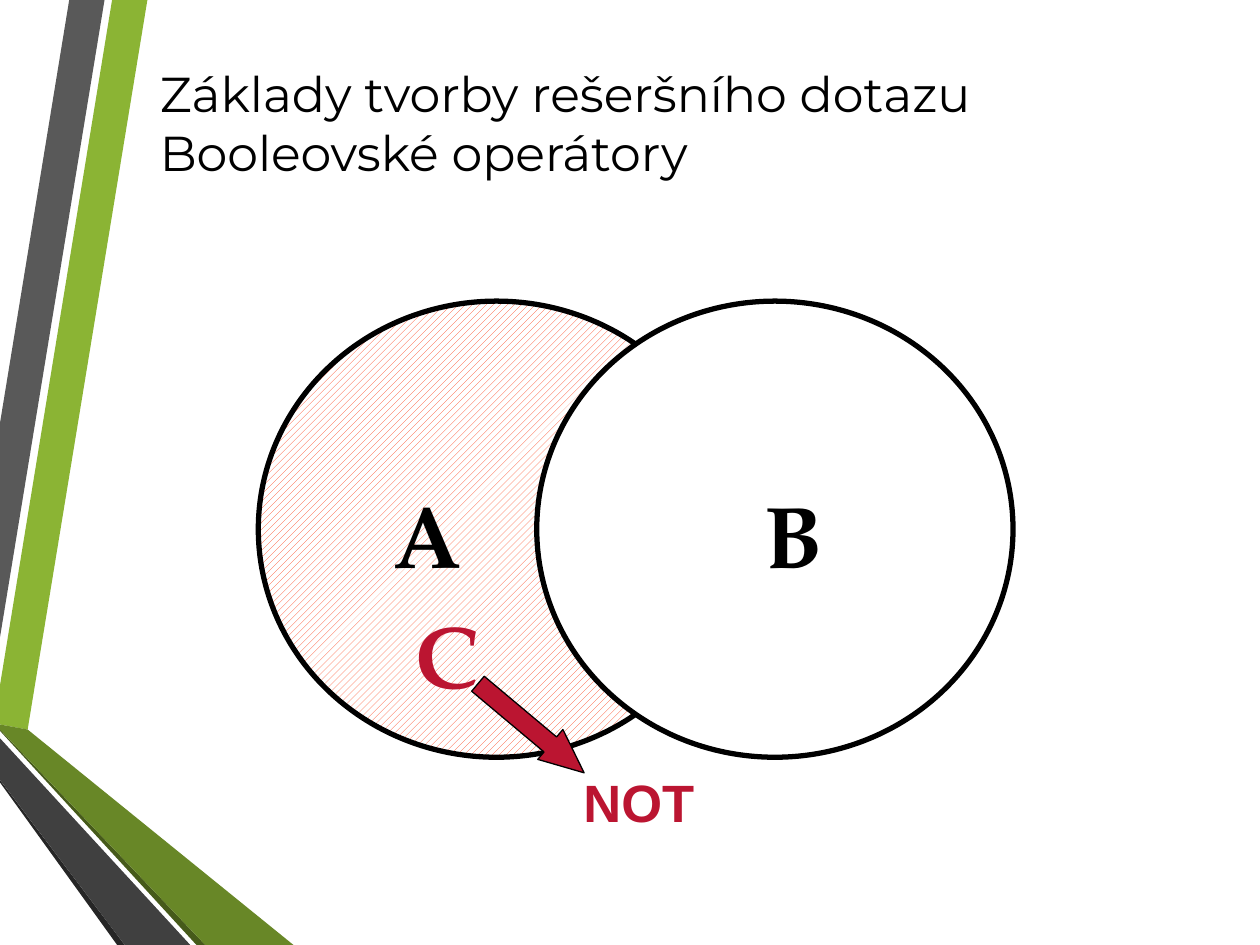
from dataclasses import dataclass

from pptx import Presentation
from pptx.dml.color import RGBColor
from pptx.enum.dml import MSO_PATTERN
from pptx.enum.shapes import MSO_SHAPE
from pptx.enum.text import MSO_ANCHOR, PP_ALIGN
from pptx.util import Inches, Pt


@dataclass(frozen=True)
class Theme:
    black: str = "000000"
    white: str = "FFFFFF"
    red: str = "BB1531"
    hatch: str = "FE4A26"
    title_font: str = "Montserrat"
    letter_font: str = "TeX Gyre Pagella"
    label_font: str = "Arial"
    title_size: int = 28
    letter_size: int = 50
    label_size: int = 30
    circle_line: float = 3
    arrow_line: float = 0.75


RIBBONS = [
    ("8BB434", [(0, 5.44), (0, 5.75), (0.22, 5.79), (1.17, 0), (0.89, 0)]),
    ("595959", [(0.83, 0), (0.55, 0), (0, 3.36), (0, 5.06)]),
    ("262626", [(0, 6.19), (0, 6.21), (0.93, 7.5), (0.99, 7.5)]),
    ("465A1A", [(0, 5.79), (0, 5.8), (1.56, 7.5), (1.63, 7.5)]),
    ("688727", [(0, 5.79), (1.63, 7.5), (2.33, 7.5), (0.22, 5.79), (0, 5.75)]),
    ("404040", [(0, 6.19), (0.99, 7.5), (1.51, 7.5), (0, 5.86)]),
]


class SlideBuilder:
    """Draws styled elements on the current slide."""

    def __init__(self, page, theme):
        self.shapes = page.shapes
        self.theme = theme

    def ribbon(self, color, points):
        corners = [(Inches(x), Inches(y)) for x, y in points]
        outline = self.shapes.build_freeform(*corners[0])
        outline.add_line_segments(corners[1:], close=True)
        shape = outline.convert_to_shape()
        shape.shadow.inherit = False
        shape.fill.solid()
        shape.fill.fore_color.rgb = RGBColor.from_string(color)
        shape.line.fill.background()

    def outlined(self, kind, bounds, line_width):
        shape = self.shapes.add_shape(kind, *map(Inches, bounds))
        shape.shadow.inherit = False
        shape.line.color.rgb = RGBColor.from_string(self.theme.black)
        shape.line.width = Pt(line_width)
        return shape

    def circle(self, left, hatched=False):
        bounds = (left, 2.39, 3.78, 3.62)
        shape = self.outlined(MSO_SHAPE.OVAL, bounds, self.theme.circle_line)
        white = RGBColor.from_string(self.theme.white)
        if hatched:
            shape.fill.patterned()
            shape.fill.pattern = MSO_PATTERN.WIDE_UPWARD_DIAGONAL
            shape.fill.fore_color.rgb = RGBColor.from_string(self.theme.hatch)
            shape.fill.back_color.rgb = white
        else:
            shape.fill.solid()
            shape.fill.fore_color.rgb = white

    def arrow(self, bounds, rotation):
        shape = self.outlined(MSO_SHAPE.DOWN_ARROW, bounds, self.theme.arrow_line)
        shape.rotation = rotation
        shape.adjustments[0] = 0.5
        shape.adjustments[1] = 1.13
        shape.fill.solid()
        shape.fill.fore_color.rgb = RGBColor.from_string(self.theme.red)

    def text(self, words, bounds, font, size, color, bold=False, align=PP_ALIGN.CENTER):
        box = self.shapes.add_textbox(*map(Inches, bounds))
        frame = box.text_frame
        frame.word_wrap = True
        frame.text = words
        paragraph = frame.paragraphs[0]
        paragraph.alignment = align
        for span in paragraph.runs:
            span.font.name = font
            span.font.size = Pt(size)
            span.font.bold = bold
            span.font.color.rgb = RGBColor.from_string(color)
        return frame

    def title(self, words):
        theme = self.theme
        frame = self.text(words, (1.17, 0.5, 8.43, 0.94), theme.title_font,
                          theme.title_size, theme.black, align=PP_ALIGN.LEFT)
        frame.vertical_anchor = MSO_ANCHOR.MIDDLE

    def letter(self, words, left, top, color):
        self.text(words, (left, top, 0.94, 0.93), self.theme.letter_font,
                  self.theme.letter_size, color, bold=True)

    def operator(self, words):
        theme = self.theme
        frame = self.text(words, (4.02, 6.06, 1.6, 0.61), theme.label_font,
                          theme.label_size, theme.red, bold=True)
        frame.margin_left = Inches(0.5)
        frame.margin_right = 0


def main():
    deck = Presentation()
    deck.slide_width, deck.slide_height = Inches(10), Inches(7.5)
    theme = Theme()
    builder = SlideBuilder(deck.slides.add_slide(deck.slide_layouts[6]), theme)
    for color, points in RIBBONS:
        builder.ribbon(color, points)
    builder.title("Základy tvorby rešeršního dotazu\vBooleovské operátory")
    builder.circle(2.05, hatched=True)
    builder.circle(4.26)
    builder.arrow((4.06, 5.23, 0.31, 1.1), 310)
    builder.letter("A", 2.92, 3.77, theme.black)
    builder.letter("B", 5.83, 3.77, theme.black)
    builder.letter("C", 3.08, 4.72, theme.red)
    builder.operator("NOT")
    deck.save("out.pptx")


if __name__ == "__main__":
    main()
